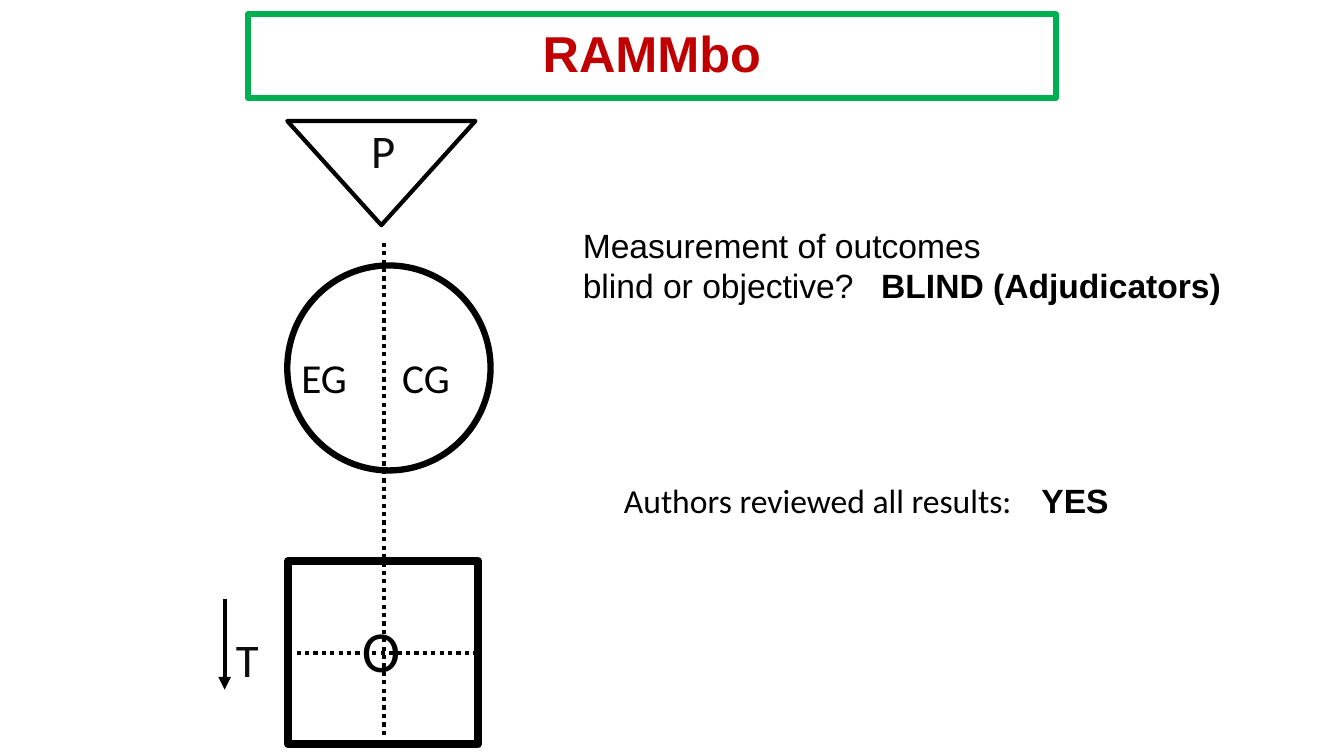
from lxml.etree import SubElement
from pptx import Presentation
from pptx.dml.color import RGBColor
from pptx.enum.dml import MSO_LINE
from pptx.enum.shapes import MSO_CONNECTOR, MSO_SHAPE
from pptx.enum.text import MSO_ANCHOR, MSO_AUTO_SIZE, PP_ALIGN
from pptx.oxml.ns import qn
from pptx.util import Inches, Pt

HUES = {"ink": "000000", "soft": "0D0D0D", "red": "C00000", "green": "00B050"}
COLS, ROWS = 160, 90
WIDE, HIGH = Inches(13.33), Inches(7.5)


def hue(name):
    return RGBColor.from_string(HUES[name])


def cells(*spots):
    return [round(spot * (HIGH / ROWS if i % 2 else WIDE / COLS))
            for i, spot in enumerate(spots)]


def stroke(line, width, name="ink"):
    line.color.rgb = hue(name)
    line.width = Pt(width)


def write(para, text, size, face="Calibri", bold=False, name="ink"):
    run = para.add_run()
    run.text = text
    font = run.font
    font.size, font.name, font.bold = Pt(size), face, bold
    font.color.rgb = hue(name)


def head(slide, text):
    title = slide.shapes.title
    title.left, title.top, title.width, title.height = cells(29.5, 1.7, 96.2, 10)
    stroke(title.line, 4, "green")
    frame = title.text_frame
    frame.auto_size = MSO_AUTO_SIZE.NONE
    frame.vertical_anchor = MSO_ANCHOR.MIDDLE
    para = frame.paragraphs[0]
    para.alignment = PP_ALIGN.CENTER
    para.line_spacing = 0.9
    write(para, text, 36, "Arial", True, "red")


def form(slide, kind, box, width, turn=0):
    shape = slide.shapes.add_shape(kind, *cells(*box))
    shape.shadow.inherit = False
    shape.fill.background()
    shape.rotation = turn
    stroke(shape.line, width)
    return shape


def link(slide, ends, dots=True):
    wire = slide.shapes.add_connector(MSO_CONNECTOR.STRAIGHT, *cells(*ends))
    stroke(wire.line, 3)
    props = wire._element.spPr
    if dots:
        wire.line.dash_style = MSO_LINE.ROUND_DOT
    else:
        SubElement(wire.line._get_or_add_ln(), qn("a:tailEnd"), type="triangle")
    SubElement(props, qn("a:effectLst"))
    return wire


def note(slide, box, lines, tab=None):
    frame = slide.shapes.add_textbox(*cells(*box)).text_frame
    frame.word_wrap = True
    for i, runs in enumerate(lines):
        para = frame.add_paragraph() if i else frame.paragraphs[0]
        if tab:
            stops = SubElement(para._p.get_or_add_pPr(), qn("a:tabLst"))
            SubElement(stops, qn("a:tab"), pos=str(Inches(tab)), algn="l")
        for run in runs:
            write(para, *run)


def main():
    deck = Presentation()
    deck.slide_width, deck.slide_height = WIDE, HIGH
    slide = deck.slides.add_slide(deck.slide_layouts[5])
    head(slide, "RAMMbo")

    link(slide, (26.75, 71.3, 26.75, 82.1), dots=False)
    link(slide, (45.7, 28.9, 45.7, 87.7))
    note(slide, (34.7, 41.4, 20.4, 7.2), [[("EG\tCG", 29.4)]], 1)

    square = form(slide, MSO_SHAPE.RECTANGLE, (34.3, 66.8, 22.6, 21.8), 6)
    split = link(slide, (34.3, 77.7, 56.9, 77.7))
    split.begin_connect(square, 1)
    split.end_connect(square, 3)
    note(slide, (41.9, 72.6, 7.1, 9.6), [[("O", 41.4)]])
    note(slide, (26.9, 74.5, 5.3, 8), [[("T", 33.4, "Calibri", False, "soft")]])

    form(slide, MSO_SHAPE.ISOSCELES_TRIANGLE, (34.2, 14.4, 22.4, 12.4), 3, 180)
    note(slide, (43, 13.9, 5.4, 8), [[("P", 33.4, "Calibri", False, "soft")]])
    form(slide, MSO_SHAPE.OVAL, (34.2, 31.6, 24.2, 24.4), 4.5)

    note(slide, (68.2, 26.2, 78.5, 15.7), [
        [("Measurement of outcomes", 24, "Arial")],
        [("blind or objective?\t", 24, "Arial"),
         ("BLIND (Adjudicators)", 24, "Arial", True)],
    ], 2.96)
    note(slide, (73.1, 56.6, 75.6, 6), [
        [("Authors reviewed all results:\t", 24), ("YES", 24, "Arial", True)],
    ], 4.14)
    deck.save("out.pptx")


if __name__ == "__main__":
    main()
